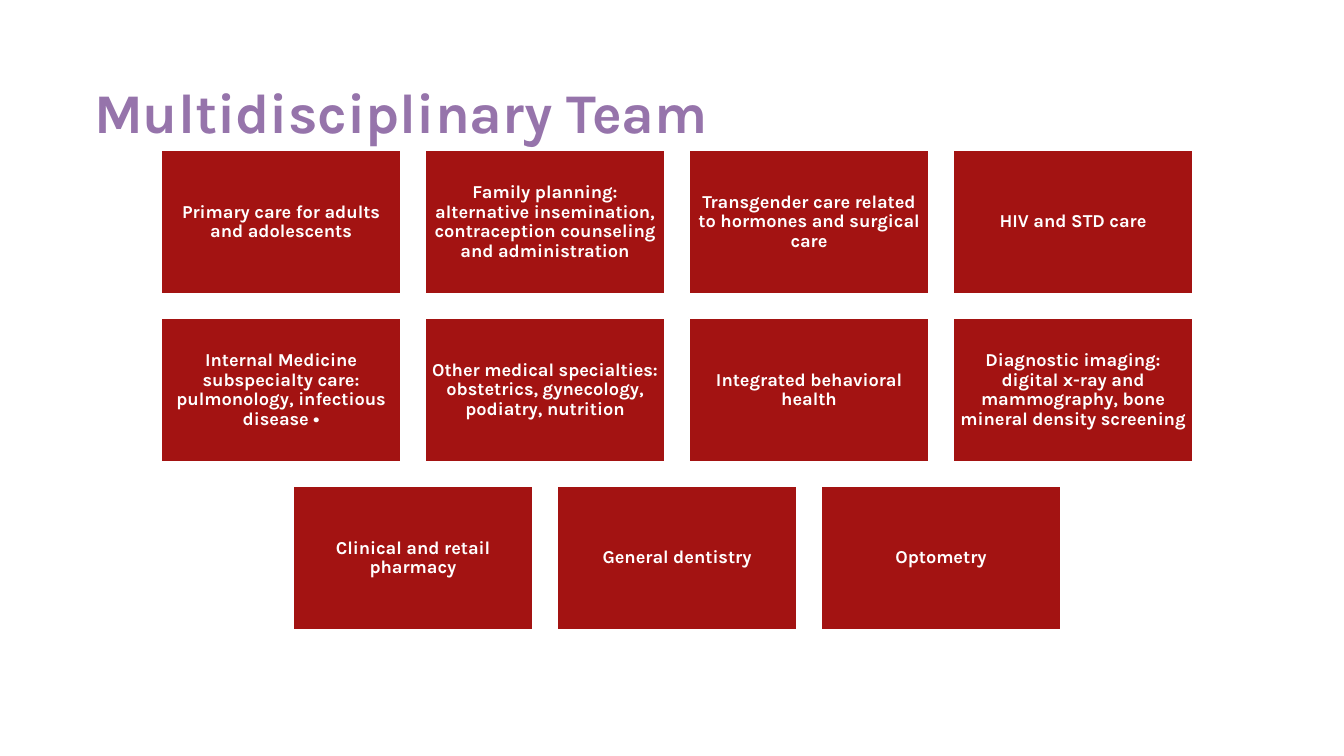
from dataclasses import dataclass

from pptx import Presentation
from pptx.dml.color import RGBColor
from pptx.enum.shapes import MSO_SHAPE
from pptx.enum.text import MSO_ANCHOR, MSO_AUTO_SIZE, PP_ALIGN
from pptx.util import Emu, Pt

RECTANGLE = MSO_SHAPE.RECTANGLE
MIDDLE, BOTTOM = MSO_ANCHOR.MIDDLE, MSO_ANCHOR.BOTTOM
LEFT, CENTER = PP_ALIGN.LEFT, PP_ALIGN.CENTER
NO_FIT = MSO_AUTO_SIZE.NONE
TITLE_ONLY = 5
EMU_PER_PX = 914400 / 100.8
SLIDE_WIDTH, SLIDE_HEIGHT = 1344, 756


@dataclass(frozen=True)
class Theme:
    font: str = "Karla"
    title_color: RGBColor = RGBColor(0x96, 0x74, 0xAB)
    card_fill: RGBColor = RGBColor(0xA3, 0x13, 0x12)
    white: RGBColor = RGBColor(0xFF, 0xFF, 0xFF)
    title_size: Pt = Pt(40)
    card_size: Pt = Pt(13)
    outline: Pt = Pt(1.5)
    line_spacing: float = 0.9


@dataclass(frozen=True)
class Box:
    left: int
    top: int
    width: int
    height: int

    def emu(self) -> list[Emu]:
        return [px(n) for n in (self.left, self.top, self.width, self.height)]


@dataclass(frozen=True)
class Service:
    label: str
    box: Box


THEME = Theme()
TITLE_BOX = Box(84, 79, 1167, 72)

# Card grid: full rows of four, with a shorter last row centred below
GRID_LEFT, GRID_TOP = 161, 150
CARD_WIDTH, CARD_HEIGHT, GAP = 240, 144, 24
COLUMNS = 4
CARD_INSET = 5

SERVICE_ROWS = [
    [
        "Primary care for adults and adolescents",
        "Family planning: alternative insemination, contraception counseling and administration",
        "Transgender care related to hormones and surgical care",
        "HIV and STD care",
    ],
    [
        "Internal Medicine subspecialty care: pulmonology, infectious disease •",
        "Other medical specialties: obstetrics, gynecology, podiatry, nutrition",
        "Integrated behavioral health",
        "Diagnostic imaging: digital x-ray and mammography, bone mineral density screening",
    ],
    ["Clinical and retail pharmacy", "General dentistry", "Optometry"],
]


def px(length: int) -> Emu:
    return Emu(round(length * EMU_PER_PX))


def apply(target, values: dict) -> None:
    for name, value in values.items():
        setattr(target, name, value)


def write(shape, text: str, frame_format: dict, align, size: Pt, color: RGBColor) -> None:
    frame = shape.text_frame
    frame.text = text
    apply(frame, {"word_wrap": True, "auto_size": NO_FIT, **frame_format})
    paragraph = frame.paragraphs[0]
    apply(paragraph, {"alignment": align, "line_spacing": THEME.line_spacing,
                      "space_before": Pt(0)})
    font = paragraph.runs[0].font
    apply(font, {"name": THEME.font, "size": size, "bold": True})
    font.color.rgb = color


def lay_out_services() -> list[Service]:
    services = []
    for row, labels in enumerate(SERVICE_ROWS):
        indent = (COLUMNS - len(labels)) * (CARD_WIDTH + GAP) // 2
        for column, label in enumerate(labels):
            left = GRID_LEFT + indent + column * (CARD_WIDTH + GAP)
            top = GRID_TOP + row * (CARD_HEIGHT + GAP)
            services.append(Service(label, Box(left, top, CARD_WIDTH, CARD_HEIGHT)))
    return services


def add_title(slide, text: str) -> None:
    title = slide.shapes.title
    apply(title, dict(zip(("left", "top", "width", "height"), TITLE_BOX.emu())))
    write(title, text, {"vertical_anchor": BOTTOM}, LEFT,
          THEME.title_size, THEME.title_color)


def add_card(slide, service: Service) -> None:
    card = slide.shapes.add_shape(RECTANGLE, *service.box.emu())
    card.shadow.inherit = False
    card.fill.solid()
    card.fill.fore_color.rgb = THEME.card_fill
    card.line.color.rgb = THEME.white
    card.line.width = THEME.outline
    sides = ("margin_left", "margin_top", "margin_right", "margin_bottom")
    frame_format = {"vertical_anchor": MIDDLE, **dict.fromkeys(sides, px(CARD_INSET))}
    write(card, service.label, frame_format, CENTER, THEME.card_size, THEME.white)


def main() -> None:
    deck = Presentation()
    apply(deck, {"slide_width": px(SLIDE_WIDTH), "slide_height": px(SLIDE_HEIGHT)})
    slide = deck.slides.add_slide(deck.slide_layouts[TITLE_ONLY])
    add_title(slide, "Multidisciplinary Team")
    for service in lay_out_services():
        add_card(slide, service)
    deck.save("out.pptx")


if __name__ == "__main__":
    main()
